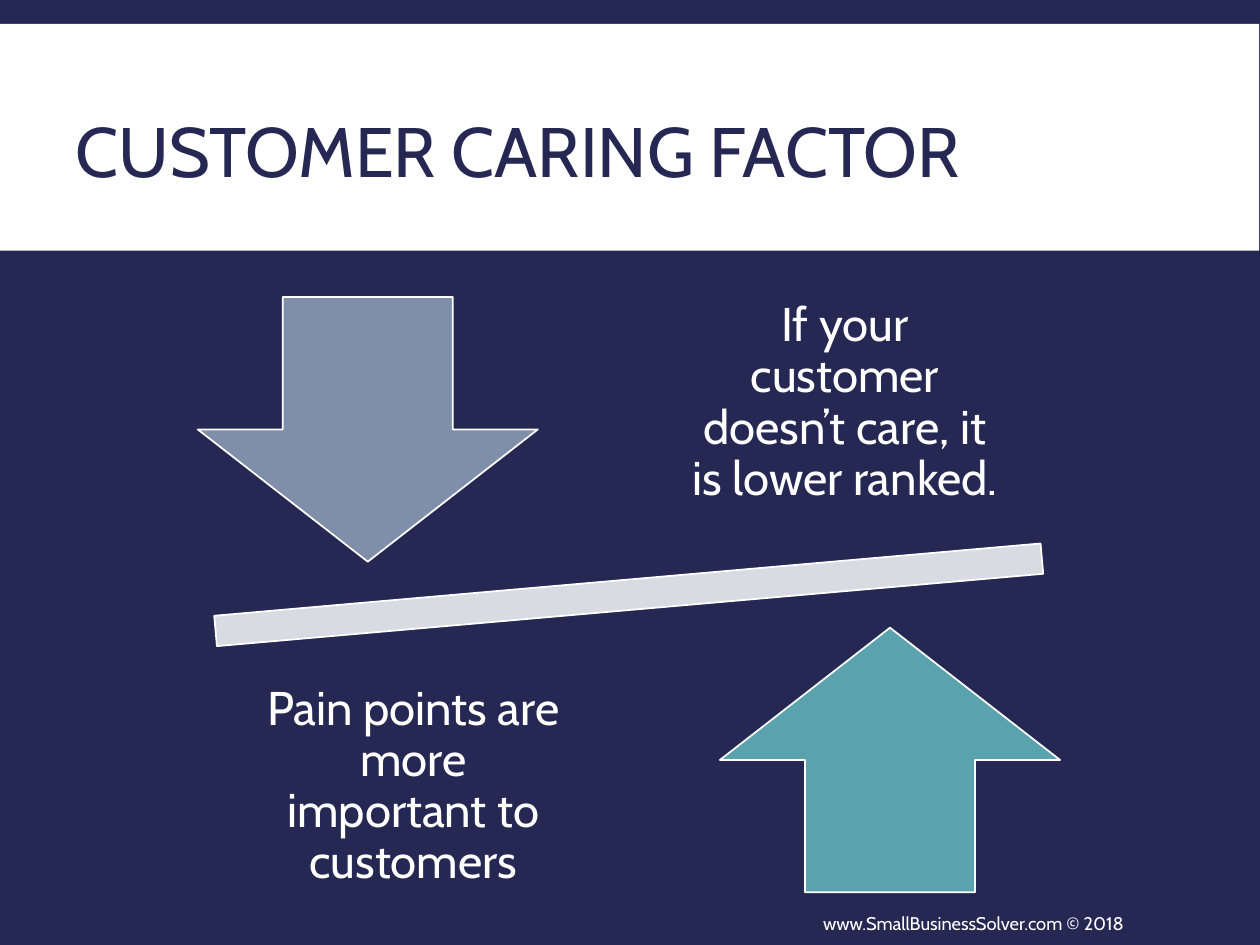
from pptx import Presentation
from pptx.dml.color import RGBColor
from pptx.enum.shapes import MSO_SHAPE
from pptx.enum.text import MSO_ANCHOR, PP_ALIGN
from pptx.util import Pt

NAVY, WHITE = "242852", "FFFFFF"
ARROW_SIZE = (194.4, 151.2)
CAPTION_SIZE = (208, 158.4)


def rgb(value):
    return RGBColor.from_string(value)


def add_shape(s, kind, left, top, width, height, fill, line=None):
    sp = s.shapes.add_shape(kind, Pt(left), Pt(top), Pt(width), Pt(height))
    sp.shadow.inherit = False
    sp.fill.solid()
    sp.fill.fore_color.rgb = rgb(fill)
    if line:
        sp.line.color.rgb = rgb(line)
        sp.line.width = Pt(1)
    else:
        sp.line.fill.background()
    return sp


def add_text(s, text, left, top, width, height, size, color=WHITE,
             align=PP_ALIGN.LEFT, spacing=1.0, inset=None):
    tf = s.shapes.add_textbox(Pt(left), Pt(top), Pt(width), Pt(height)).text_frame
    tf.word_wrap = True
    tf.vertical_anchor = MSO_ANCHOR.MIDDLE
    if inset is not None:
        tf.margin_left = tf.margin_right = Pt(inset)
        tf.margin_top = tf.margin_bottom = Pt(inset)
    p = tf.paragraphs[0]
    p.text = text
    p.alignment = align
    p.line_spacing = spacing
    p.font.name = "Cabin"
    p.font.size = Pt(size)
    p.font.color.rgb = rgb(color)


def add_caption(s, text, left, top):
    add_text(s, text, left, top, *CAPTION_SIZE, size=27,
             align=PP_ALIGN.CENTER, spacing=0.9, inset=15.1)


def main():
    prs = Presentation()
    prs.slide_width, prs.slide_height = Pt(720), Pt(540)
    s = prs.slides.add_slide(prs.slide_layouts[6])
    s.background.fill.solid()
    s.background.fill.fore_color.rgb = rgb(NAVY)

    add_shape(s, MSO_SHAPE.RECTANGLE, 0, 13.7, 719.5, 129.6, WHITE)
    add_text(s, "CUSTOMER CARING FACTOR", 36, 44, 648, 90, 40, NAVY, spacing=0.85)

    beam = add_shape(s, MSO_SHAPE.MATH_MINUS, 36.8, 302.9, 645, 74, "D8DBE2", WHITE)
    beam.rotation = 355
    add_shape(s, MSO_SHAPE.DOWN_ARROW, 113, 169.8, *ARROW_SIZE, "7F8FA9", WHITE)
    add_caption(s, "If your customer doesn’t care, it is lower ranked.", 378.7, 151.2)
    add_shape(s, MSO_SHAPE.UP_ARROW, 411.4, 358.7, *ARROW_SIZE, "5AA2AE", WHITE)
    add_caption(s, "Pain points are more important to customers", 132.2, 370.3)

    add_text(s, "www.SmallBusinessSolver.com © 2018", 329.8, 513.4, 319.7, 28.8,
             10.5, align=PP_ALIGN.RIGHT)
    prs.save("out.pptx")


if __name__ == "__main__":
    main()
